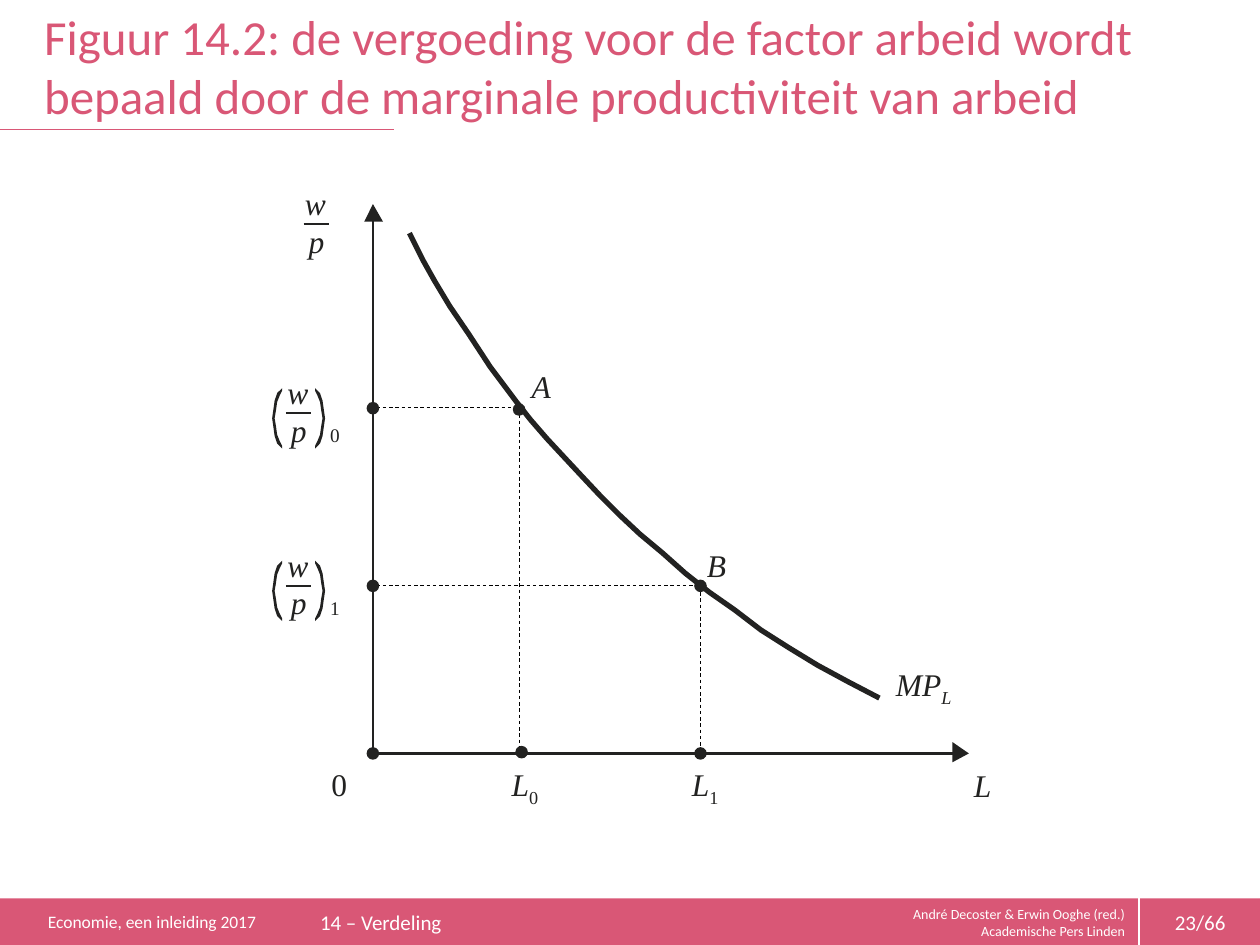
from lxml import etree
from pptx import Presentation
from pptx.dml.color import RGBColor
from pptx.enum import dml, shapes, text
from pptx.oxml import ns
from pptx.util import Pt

PX = 9144  # EMU in one px, 100 px to the inch
PINK, INK, WHITE, BLACK = "D95776", "222221", "FFFFFF", "000000"
SANS, SERIF = "Calibri", "Times New Roman"
LEFT, CENTER, RIGHT = (text.PP_ALIGN.LEFT, text.PP_ALIGN.CENTER,
                       text.PP_ALIGN.RIGHT)
TOP, MIDDLE = text.MSO_ANCHOR.TOP, text.MSO_ANCHOR.MIDDLE

TITLE = ("Figuur 14.2: de vergoeding voor de factor arbeid wordt "
         "bepaald door de marginale productiviteit van arbeid")
# box, lines, size, alignment, anchor, insets (left, top, right, bottom)
FOOTER = [
    ((38, 718, 218, 27), ["Economie, een inleiding 2017"], 10, LEFT, TOP,
     (0, 5, 10, 5)),
    ((254, 713, 456, 37), ["14 – Verdeling"], 12, LEFT, MIDDLE,
     (0, 5, 10, 5)),
    ((712, 714, 191, 37),
     ["André Decoster & Erwin Ooghe (red.)", "Academische Pers Linden"],
     8, RIGHT, TOP, (10, 5, 10, 5)),
    ((905, 714, 95, 36), ["23/66"], 12, CENTER, MIDDLE, (0, 0, 0, 0)),
]
# box, runs as (text, italic, subscript), size
LABELS = [
    ((422, 291, 27, 39), [("A", True, False)], 18),
    ((561, 433, 27, 39), [("B", True, False)], 18),
    ((406, 607, 22, 30), [("L", True, False), ("0", False, True)], 18),
    ((549, 607, 22, 30), [("L", True, False), ("1", False, True)], 18),
    ((711, 528, 45, 30), [("MP", True, False), ("L", True, True)], 18),
    ((773, 608, 26, 39), [("L", True, False)], 18),
    ((263, 607, 24, 41), [("0", False, False)], 18),
    ((262, 336, 15, 25), [("0", False, False)], 11),
    ((262, 473, 15, 25), [("1", False, False)], 11),
]
FRACTIONS = [(241, 178), (227, 328), (227, 465)]  # left end of each bar
AXES = [(296, 173), (296, 598), (759, 598)]
ARROWHEADS = [[(289, 176), (296, 162), (304, 176)],
              [(756, 605), (769, 598), (756, 589)]]
CURVE = [(325, 185), (330, 195), (336, 207), (345, 223), (357, 243),
         (372, 265), (389, 291), (410, 319), (421, 333), (434, 348),
         (447, 362), (461, 377), (476, 393), (492, 409), (508, 424),
         (526, 439), (544, 455), (563, 470), (583, 484), (604, 500),
         (626, 514), (649, 528), (673, 541), (698, 554)]
GUIDES = [(294, 465, 554, 465), (556, 465, 556, 595),
          (412, 329, 412, 597), (294, 323, 412, 323)]
DOT = 10
DOTS = [(291, 319), (291, 460), (291, 593), (551, 593), (551, 460),
        (407, 320), (409, 592)]
# upper half of a left bracket, as offsets from the middle of the pair
BRACKET = [(-19, 0), (-18, -6), (-17, -13), (-15, -18), (-13, -22),
           (-13, -24), (-17, -20), (-19, -14), (-20, -7), (-21, 0)]
BRACKET_CENTRES = [(237, 332), (237, 469)]


def rgb(value):
    return RGBColor.from_string(value)


def emu(values):
    return [v * PX for v in values]


def set_all(obj, **values):
    for name, value in values.items():
        setattr(obj, name, value)


def set_frame(tf, insets, **values):
    sides = ("margin_left", "margin_top", "margin_right", "margin_bottom")
    set_all(tf, **dict(zip(sides, emu(insets))), **values)


def style_run(r, size, face, color, italic=False):
    set_all(r.font, size=Pt(size), name=face, italic=italic)
    r.font.color.rgb = rgb(color)


def paint(sp, color):
    sp.shadow.inherit = False
    sp.fill.solid()
    sp.fill.fore_color.rgb = rgb(color)
    sp.line.fill.background()


def add_line(s, ends, color, width, dash=None):
    c = s.shapes.add_connector(shapes.MSO_CONNECTOR.STRAIGHT, *emu(ends))
    c.line.color.rgb = rgb(color)
    c.line.width = Pt(width)
    if dash:
        c.line.dash_style = dash
    etree.SubElement(c.element.spPr, ns.qn("a:effectLst"))


def outline(s, points, close):
    fb = s.shapes.build_freeform(*points[0], scale=PX)
    fb.add_line_segments(points[1:], close=close)
    return fb.convert_to_shape()


def add_path(s, points, width):
    sp = outline(s, points, False)
    sp.shadow.inherit = False
    sp.fill.background()
    sp.line.color.rgb = rgb(INK)
    sp.line.width = Pt(width)


def add_label(s, box, runs, size):
    tf = s.shapes.add_textbox(*emu(box)).text_frame
    set_frame(tf, (0, 0, 0, 0), word_wrap=False,
              auto_size=text.MSO_AUTO_SIZE.SHAPE_TO_FIT_TEXT)
    for words, italic, subscript in runs:
        r = tf.paragraphs[0].add_run()
        r.text = words
        style_run(r, size, SERIF, INK, italic)
        if subscript:
            r.font._element.set("baseline", "-25000")


def add_fraction(s, x, y):
    add_label(s, (x + 1, y - 32, 29, 39), [("w", True, False)], 18)
    add_label(s, (x + 4, y - 2, 23, 39), [("p", True, False)], 18)
    add_line(s, (x, y, x + 20, y), INK, 1)


def add_brackets(s, cx, cy):
    lower = [(dx, -dy) for dx, dy in reversed(BRACKET[1:-1])]
    # down the outer edge first, then back up the inner one
    points = BRACKET + lower
    for side in (1, -1):
        paint(outline(s, [(cx + side * dx, cy + dy) for dx, dy in points],
                      True), INK)


def add_footer(s):
    bar = s.shapes.add_shape(shapes.MSO_SHAPE.RECTANGLE,
                             *emu((0, 713, 1000, 37)))
    paint(bar, PINK)
    add_line(s, (904, 712, 904, 750), WHITE, 1)
    for box, lines, size, align, anchor, insets in FOOTER:
        tf = s.shapes.add_textbox(*emu(box)).text_frame
        set_frame(tf, insets, word_wrap=True, vertical_anchor=anchor)
        tf.text = "\n".join(lines)
        for p in tf.paragraphs:
            p.alignment = align
            style_run(p.runs[0], size, SANS, WHITE)


def add_title(s):
    sp = s.shapes.title
    set_all(sp, **dict(zip(("left", "top", "width", "height"),
                           emu((35, 0, 929, 104)))))
    tf = sp.text_frame
    tf.text = TITLE
    set_frame(tf, (0, 0, 0, 0), word_wrap=True, vertical_anchor=MIDDLE,
              auto_size=text.MSO_AUTO_SIZE.NONE)
    tf.paragraphs[0].alignment = LEFT
    style_run(tf.paragraphs[0].runs[0], 28, SANS, PINK)
    add_line(s, (0, 103, 313, 103), PINK, 0.75)


def add_diagram(s):
    for label in LABELS:
        add_label(s, *label)
    add_path(s, AXES, 1.5)
    for head in ARROWHEADS:
        paint(outline(s, head, True), INK)
    add_path(s, CURVE, 3)
    for bar in FRACTIONS:
        add_fraction(s, *bar)
    for centre in BRACKET_CENTRES:
        add_brackets(s, *centre)
    for ends in GUIDES:
        add_line(s, ends, BLACK, 0.5, dml.MSO_LINE.DASH)
    for x, y in DOTS:
        paint(s.shapes.add_shape(shapes.MSO_SHAPE.OVAL,
                                 *emu((x, y, DOT, DOT))), INK)


def main():
    prs = Presentation()
    set_all(prs, slide_width=1000 * PX, slide_height=750 * PX)
    s = prs.slides.add_slide(prs.slide_layouts[5])
    add_footer(s)
    add_title(s)
    add_diagram(s)
    prs.save("out.pptx")


if __name__ == "__main__":
    main()
